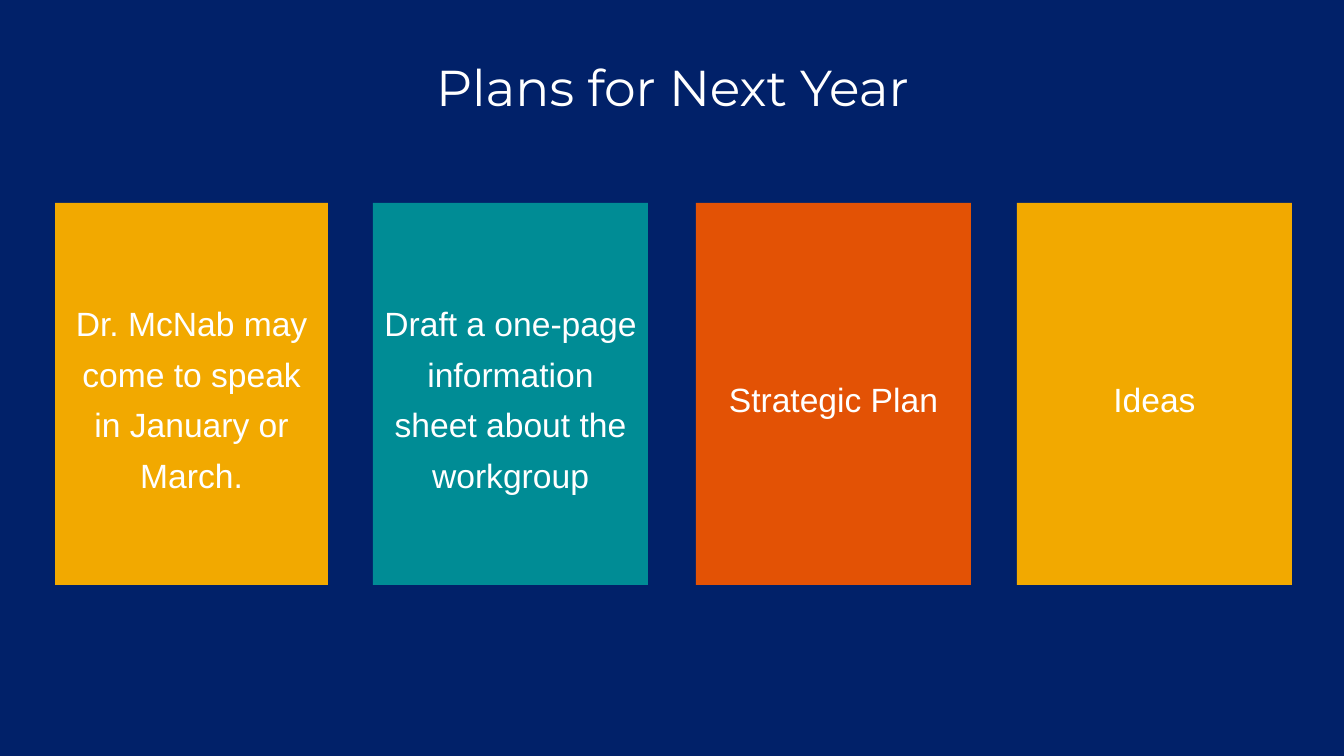
from dataclasses import dataclass

from pptx import Presentation
from pptx.dml.color import RGBColor
from pptx.enum.shapes import MSO_SHAPE
from pptx.enum.text import MSO_ANCHOR, PP_ALIGN
from pptx.util import Pt

RECTANGLE = MSO_SHAPE.RECTANGLE
MIDDLE = MSO_ANCHOR.MIDDLE
CENTER = PP_ALIGN.CENTER
EMU_PER_PX = 914400 / 100.8
BLANK_LAYOUT = 6


@dataclass(frozen=True)
class Theme:
    navy: str = "012169"
    gold: str = "F2A900"
    teal: str = "008C95"
    orange: str = "E35205"
    white: str = "FFFFFF"
    title_font: str = "Montserrat"
    body_font: str = "Arial"
    title_size: int = 36
    body_size: int = 24


def px(length):
    return round(length * EMU_PER_PX)


def write_text(shape, text, *, font, size, color, line_spacing):
    """Fill a shape with one centred paragraph."""
    frame = shape.text_frame
    frame.word_wrap = True
    frame.vertical_anchor = MIDDLE
    para = frame.paragraphs[0]
    para.alignment = CENTER
    para.line_spacing = line_spacing
    span = para.add_run()
    span.text = text
    span.font.name = font
    span.font.size = Pt(size)
    span.font.color.rgb = RGBColor.from_string(color)


class PlanSlide:
    def __init__(self, deck, theme):
        self.theme = theme
        self.page = deck.slides.add_slide(deck.slide_layouts[BLANK_LAYOUT])
        background = self.page.background.fill
        background.solid()
        background.fore_color.rgb = RGBColor.from_string(theme.navy)

    def title(self, text, left, top, width, height):
        box = self.page.shapes.add_textbox(px(left), px(top), px(width), px(height))
        write_text(box, text, font=self.theme.title_font, size=self.theme.title_size,
                   color=self.theme.white, line_spacing=0.9)

    def card(self, text, color, left, top, width, height):
        card = self.page.shapes.add_shape(
            RECTANGLE, px(left), px(top), px(width), px(height))
        card.shadow.inherit = False
        card.fill.solid()
        card.fill.fore_color.rgb = RGBColor.from_string(color)
        card.line.fill.background()
        write_text(card, text, font=self.theme.body_font, size=self.theme.body_size,
                   color=self.theme.white, line_spacing=1.25)


def main():
    theme = Theme()
    deck = Presentation()
    deck.slide_width, deck.slide_height = px(1344), px(756)
    slide = PlanSlide(deck, theme)

    # Heading
    slide.title("Plans for Next Year", 93, 41, 1159, 98)

    # Plan cards: text, colour, left edge, width
    cards = [
        ("Dr. McNab may come to speak in January or March.", theme.gold, 55, 273),
        ("Draft a one-page information sheet about the workgroup", theme.teal, 373, 275),
        ("Strategic Plan", theme.orange, 696, 275),
        ("Ideas", theme.gold, 1017, 275),
    ]
    for text, color, left, width in cards:
        slide.card(text, color, left, 203, width, 382)

    deck.save("out.pptx")


if __name__ == "__main__":
    main()
